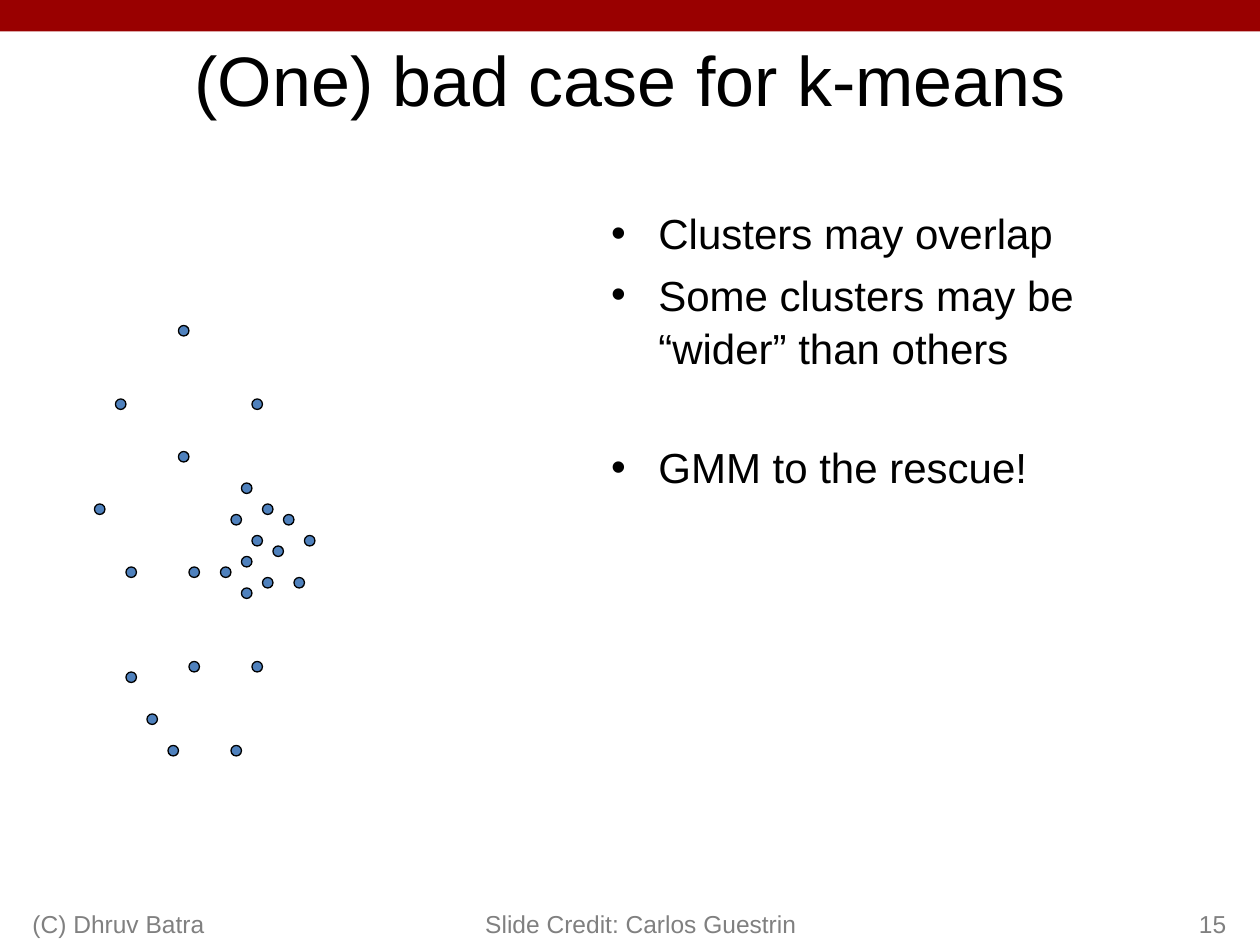
from pptx import Presentation
from pptx import util as u
from pptx.dml.color import RGBColor
from pptx.enum import shapes, text

BLACK, GREY, RED, BLUE = "000000", "808080", "990000", "4F81BD"

# Data points as (column, row) on a grid of twelfths of an inch
GRID = 12
WIDE_CLUSTER = [(17, 31), (11, 38), (24, 38), (17, 43), (9, 48), (12, 54), (18, 54),
                (24, 63), (18, 63), (12, 64), (14, 68), (16, 71), (22, 71)]
TIGHT_CLUSTER = [(23, 46), (25, 48), (22, 49), (27, 49), (24, 51), (29, 51), (26, 52),
                 (23, 53), (21, 54), (25, 55), (28, 55), (23, 56)]


def color(value):
    return RGBColor.from_string(value)


class SlideBuilder:
    def __init__(self, slide, font_name="Arial"):
        self.slide = slide
        self.font_name = font_name

    def place(self, shape, left, top, width, height):
        shape.left, shape.top = u.Inches(left), u.Inches(top)
        shape.width, shape.height = u.Inches(width), u.Inches(height)

    def style(self, paragraph, size, font_color=BLACK):
        font = paragraph.font
        font.name, font.size = self.font_name, u.Pt(size)
        font.color.rgb = color(font_color)

    def title(self, wording, *box):
        shape = self.slide.shapes.title
        self.place(shape, *box)
        shape.text_frame.text = wording
        self.style(shape.text_frame.paragraphs[0], 40)

    def bullets(self, items, *box):
        """Fill the body placeholder with (wording, space before in points) items."""
        shape = self.slide.placeholders[1]
        self.place(shape, *box)
        frame = shape.text_frame
        frame.text = "\n".join(wording for wording, _ in items)
        for paragraph, (_, space) in zip(frame.paragraphs, items):
            self.style(paragraph, 24)
            paragraph.space_before = u.Pt(space)
            paragraph.line_spacing = 1.05

    def shape(self, kind, fill, left, top, width, height, line=None):
        shape = self.slide.shapes.add_shape(
            kind, u.Inches(left), u.Inches(top), u.Inches(width), u.Inches(height))
        shape.shadow.inherit = False
        shape.fill.solid()
        shape.fill.fore_color.rgb = color(fill)
        if line:
            shape.line.color.rgb = color(line)
            shape.line.width = u.Pt(0.75)
        else:
            shape.line.fill.background()

    def dots(self, points):
        for column, row in points:
            self.shape(shapes.MSO_SHAPE.OVAL, BLUE, column / GRID, row / GRID,
                       1 / GRID, 1 / GRID, line=BLACK)

    def footer(self, wording, left, width, alignment):
        box = self.slide.shapes.add_textbox(
            u.Inches(left), u.Inches(7), u.Inches(width), u.Inches(0.5))
        frame = box.text_frame
        frame.word_wrap = True
        frame.vertical_anchor = text.MSO_ANCHOR.BOTTOM
        frame.text = wording
        paragraph = frame.paragraphs[0]
        paragraph.alignment = alignment
        self.style(paragraph, 14, GREY)


def main():
    presentation = Presentation()
    presentation.slide_width, presentation.slide_height = u.Inches(10), u.Inches(7.5)
    slide = presentation.slides.add_slide(presentation.slide_layouts[1])
    builder = SlideBuilder(slide)

    builder.shape(shapes.MSO_SHAPE.RECTANGLE, RED, 0, 0, 10, 0.25)
    builder.title("(One) bad case for k-means", 0.75, 0.25, 8.5, 0.75)
    builder.dots(WIDE_CLUSTER + TIGHT_CLUSTER)
    builder.bullets([("Clusters may overlap", 4.8),
                     ("Some clusters may be “wider” than others", 4.8),
                     ("GMM to the rescue!", 38)], 4.75, 1.58, 4.75, 5.75)

    builder.footer("Slide Credit: Carlos Guestrin", 3.5, 2.92, text.PP_ALIGN.RIGHT)
    builder.footer("(C) Dhruv Batra", 0.16, 3.17, text.PP_ALIGN.LEFT)
    builder.footer("15", 7.75, 2.08, text.PP_ALIGN.RIGHT)
    presentation.save("out.pptx")


if __name__ == "__main__":
    main()
